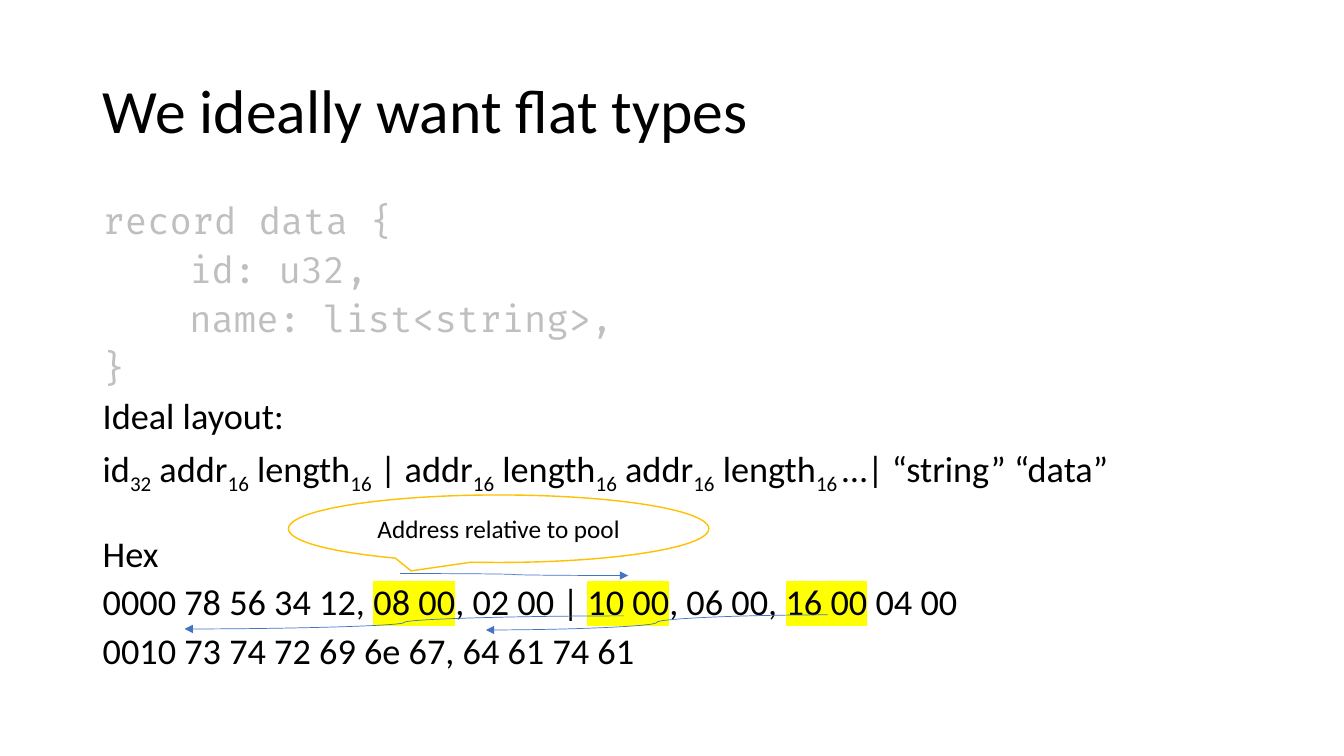
from lxml import etree
from pptx import Presentation
from pptx import util as u
from pptx.dml.color import RGBColor
from pptx.enum import shapes, text
from pptx.oxml import ns

WIDTH, HEIGHT = 13.33, 7.5
BLACK, GREY, BLUE, GOLD, YELLOW = "000000", "BFBFBF", "4472C4", "FFC000", "FFFF00"
SANS, MONO = "Calibri", "Fira Code"
BODY_SIZE = 25.9
CODE_INDENT = 0.86

TITLE = "We ideally want flat types"
CODE = [("record data {", 0), ("id: u32,", 1), ("name: list<string>,", 1), ("}", 0)]
LAYOUT = ["id", "32", " addr", "16", " length", "16", " | addr", "16", " length", "16",
          " addr", "16", " length", "16 ", "…| “string” “data”"]
HEX = ["0000 78 56 34 12, ", "08 00", ", 02 00 | ", "10 00", ", 06 00, ", "16 00", " 04 00"]
HEX_END = "0010 73 74 72 69 6e 67, 64 61 74 61"
CALLOUT = "Address relative to pool"

TITLE_BOX = (6.9, 5.33, 86.25, 19.33)
BODY_BOX = (6.9, 26.67, 86.25, 63.5)
CALLOUT_BOX = (21.46, 65.47, 31.28, 8.93)
ARROWS = [(29.78, 75.87, 46.74, 76.13), (46.44, 81.47, 13.73, 83.2),
          (61.59, 81.33, 36.16, 83.33)]


def place(percents):
    return [u.Inches(percent / 100 * side)
            for percent, side in zip(percents, (WIDTH, HEIGHT) * 2)]


def color(value):
    return RGBColor.from_string(value)


def style(paragraph, size, name=SANS, fill=BLACK, spacing=None, before=0):
    paragraph.font.size = u.Pt(size)
    paragraph.font.name = name
    paragraph.font.color.rgb = color(fill)
    paragraph.line_spacing = spacing
    paragraph.space_before = u.Pt(before)


def add_frame(box, anchor):
    frame = slide.shapes.add_textbox(*place(box)).text_frame
    frame.word_wrap = True
    frame.vertical_anchor = anchor
    return frame


def subscript(run):
    run._r.get_or_add_rPr().set("baseline", "-25000")


def highlight(run):
    mark = etree.SubElement(run._r.get_or_add_rPr(), ns.qn("a:highlight"))
    etree.SubElement(mark, ns.qn("a:srgbClr"), val=YELLOW)


def add_line(parts, mark=None, name=SANS, fill=BLACK, indent=0):
    first = not body.paragraphs[0].runs
    paragraph = body.paragraphs[0] if first else body.add_paragraph()
    style(paragraph, BODY_SIZE, name, fill, 0.8, 10)
    if indent:
        properties = paragraph._p.get_or_add_pPr()
        properties.set("marL", str(u.Inches(indent * CODE_INDENT)))
        properties.set("indent", "0")
    for index, part in enumerate(parts):
        run = paragraph.add_run()
        run.text = part
        if index % 2:
            mark(run)
    return paragraph


def add_arrow(ends):
    arrow = slide.shapes.add_connector(shapes.MSO_CONNECTOR.CURVE, *place(ends))
    arrow.line.color.rgb = color(BLUE)
    arrow.line.width = u.Pt(0.5)
    etree.SubElement(arrow.line._get_or_add_ln(), ns.qn("a:tailEnd"), type="triangle")
    etree.SubElement(arrow._element.spPr, ns.qn("a:effectLst"))


presentation = Presentation()
presentation.slide_width = u.Inches(WIDTH)
presentation.slide_height = u.Inches(HEIGHT)
slide = presentation.slides.add_slide(presentation.slide_layouts[6])

title = add_frame(TITLE_BOX, text.MSO_ANCHOR.MIDDLE).paragraphs[0]
title.text = TITLE
style(title, 44, spacing=0.9)

body = add_frame(BODY_BOX, text.MSO_ANCHOR.TOP)
for code, level in CODE:
    add_line([code], name=MONO, fill=GREY, indent=level)
add_line(["Ideal layout:"])
add_line(LAYOUT, subscript).add_line_break()
add_line(["Hex"])
add_line(HEX, highlight)
add_line([HEX_END])

for ends in ARROWS:
    add_arrow(ends)

callout = slide.shapes.add_shape(shapes.MSO_SHAPE.OVAL_CALLOUT, *place(CALLOUT_BOX))
callout.shadow.inherit = False
callout.fill.solid()
callout.fill.fore_color.rgb = color("FFFFFF")
callout.line.color.rgb = color(GOLD)
callout.line.width = u.Pt(1)
callout.text_frame.vertical_anchor = text.MSO_ANCHOR.MIDDLE
label = callout.text_frame.paragraphs[0]
label.text = CALLOUT
label.alignment = text.PP_ALIGN.CENTER
style(label, 18)

presentation.save("out.pptx")
